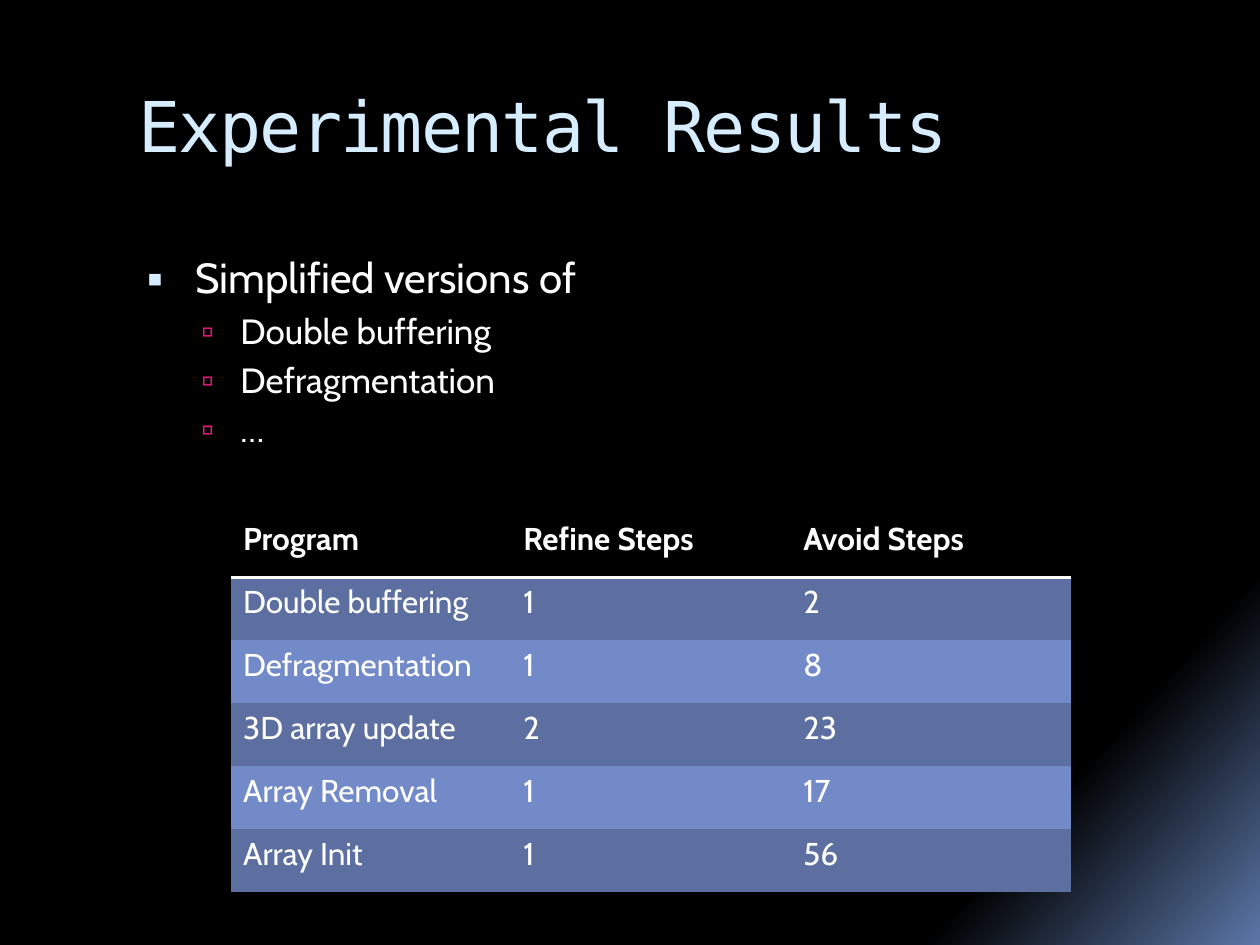
from dataclasses import dataclass

from lxml import etree
from pptx import Presentation, util as u
from pptx.dml.color import RGBColor
from pptx.enum import text
from pptx.oxml import ns


@dataclass(frozen=True)
class Theme:
    black: str = "000000"
    white: str = "FFFFFF"
    glow: str = "5B77A8"
    pale: str = "D6ECFF"
    pink: str = "EA157A"
    dark: str = "5C6FA0"
    light: str = "738AC8"
    head: str = "DejaVu Sans Mono"
    body: str = "Cabin"
    title: int = 40
    lead: int = 24
    item: int = 20
    cell: int = 18


@dataclass(frozen=True)
class Level:
    size: int
    left: float
    hang: float
    mark: str
    color: str
    scale: int
    before: int


def add(node, tag, **attrs):
    return etree.SubElement(node, ns.qn(tag), attrs)


class Deck:
    plain = "{2D5ABB26-0587-4C30-8999-92F81FD0307C}"

    def __init__(self, theme, wide=10, high=7.5):
        self.theme = theme
        self.file = Presentation()
        self.file.slide_width = u.Inches(wide)
        self.file.slide_height = u.Inches(high)
        self.slide = self.file.slides.add_slide(self.file.slide_layouts[5])

    def area(self, left, top, width, height):
        """Turn shares of the slide into lengths."""
        wide, high = self.file.slide_width, self.file.slide_height
        return (round(left * wide), round(top * high),
                round(width * wide), round(height * high))

    def style(self, par, size, color, face, bold=False):
        for run in par.runs:
            font = run.font
            font.size, font.name, font.bold = u.Pt(size), face, bold
            font.color.rgb = RGBColor.from_string(color)

    def back(self, angle, stops):
        fill = self.slide.background.fill
        fill.gradient()
        fill.gradient_angle = 360 - angle
        for stop, (place, color) in zip(fill.gradient_stops, stops):
            stop.position = place
            stop.color.rgb = RGBColor.from_string(color)

    def title(self, words, area):
        shape = self.slide.shapes.title
        shape.left, shape.top, shape.width, shape.height = self.area(*area)
        frame = shape.text_frame
        frame.text = words
        frame.vertical_anchor = text.MSO_ANCHOR.TOP
        frame.margin_top = u.Inches(0.09)
        par = frame.paragraphs[0]
        par.alignment = text.PP_ALIGN.LEFT
        self.style(par, self.theme.title, self.theme.pale, self.theme.head)
        par.runs[0].font._element.set("spc", "-100")

    def bullets(self, items, levels, area):
        frame = self.slide.shapes.add_textbox(*self.area(*area)).text_frame
        frame.word_wrap = True
        frame.text = "\n".join(words for _, words in items)
        for par, (depth, _) in zip(frame.paragraphs, items):
            level = levels[depth]
            par.level = depth
            if par is not frame.paragraphs[0] and depth:
                par.space_before = u.Pt(level.before)
            self.style(par, level.size, self.theme.white, self.theme.body)
            props = par._p.get_or_add_pPr()
            props.set("marL", str(u.Inches(level.left)))
            props.set("indent", str(-u.Inches(level.hang)))
            tint = add(props, "a:buClr")
            add(tint, "a:srgbClr", val=level.color)
            add(props, "a:buSzPct", val=str(level.scale * 1000))
            add(props, "a:buFont", typeface=self.theme.body)
            add(props, "a:buChar", char=level.mark)

    def table(self, rows, area):
        theme = self.theme
        grid = self.slide.shapes.add_table(
            len(rows), len(rows[0]), *self.area(*area)).table
        grid._tbl.tblPr.find(ns.qn("a:tableStyleId")).text = self.plain
        grid.horz_banding = False
        for r, row in enumerate(rows):
            band = (theme.light, theme.dark)[r % 2] if r else theme.black
            for c, words in enumerate(row):
                cell = grid.cell(r, c)
                cell.text = words
                cell.fill.solid()
                cell.fill.fore_color.rgb = RGBColor.from_string(band)
                self.style(cell.text_frame.paragraphs[0], theme.cell,
                           theme.white, theme.body, bold=r == 0)
                if r == 0:
                    self.rule(cell, 2, theme.white)

    def rule(self, cell, width, color):
        """Draw a line under a cell."""
        props = cell._tc.get_or_add_tcPr()
        line = add(props, "a:lnB", w=str(u.Pt(width)))
        add(add(line, "a:solidFill"), "a:srgbClr", val=color)
        props.insert(0, line)


def main():
    theme = Theme()
    deck = Deck(theme)
    deck.back(42, [(0.84, theme.black), (1, theme.glow)])
    deck.title("Experimental Results", (0.1, 0.075, 0.85, 0.133))
    levels = [Level(theme.lead, 0.45, 0.38, "▪", theme.pale, 95, 7),
              Level(theme.item, 0.81, 0.31, "▫", theme.pink, 90, 4)]
    deck.bullets([(0, "Simplified versions of"), (1, "Double buffering"),
                  (1, "Defragmentation"), (1, "…")],
                 levels, (0.1, 0.26, 0.85, 0.284))
    deck.table([("Program", "Refine Steps", "Avoid Steps"),
                ("Double buffering", "1", "2"),
                ("Defragmentation", "1", "8"),
                ("3D array update", "2", "23"),
                ("Array Removal", "1", "17"),
                ("Array Init", "1", "56")],
               (0.183, 0.544, 0.667, 0.4))
    deck.file.save("out.pptx")


if __name__ == "__main__":
    main()
